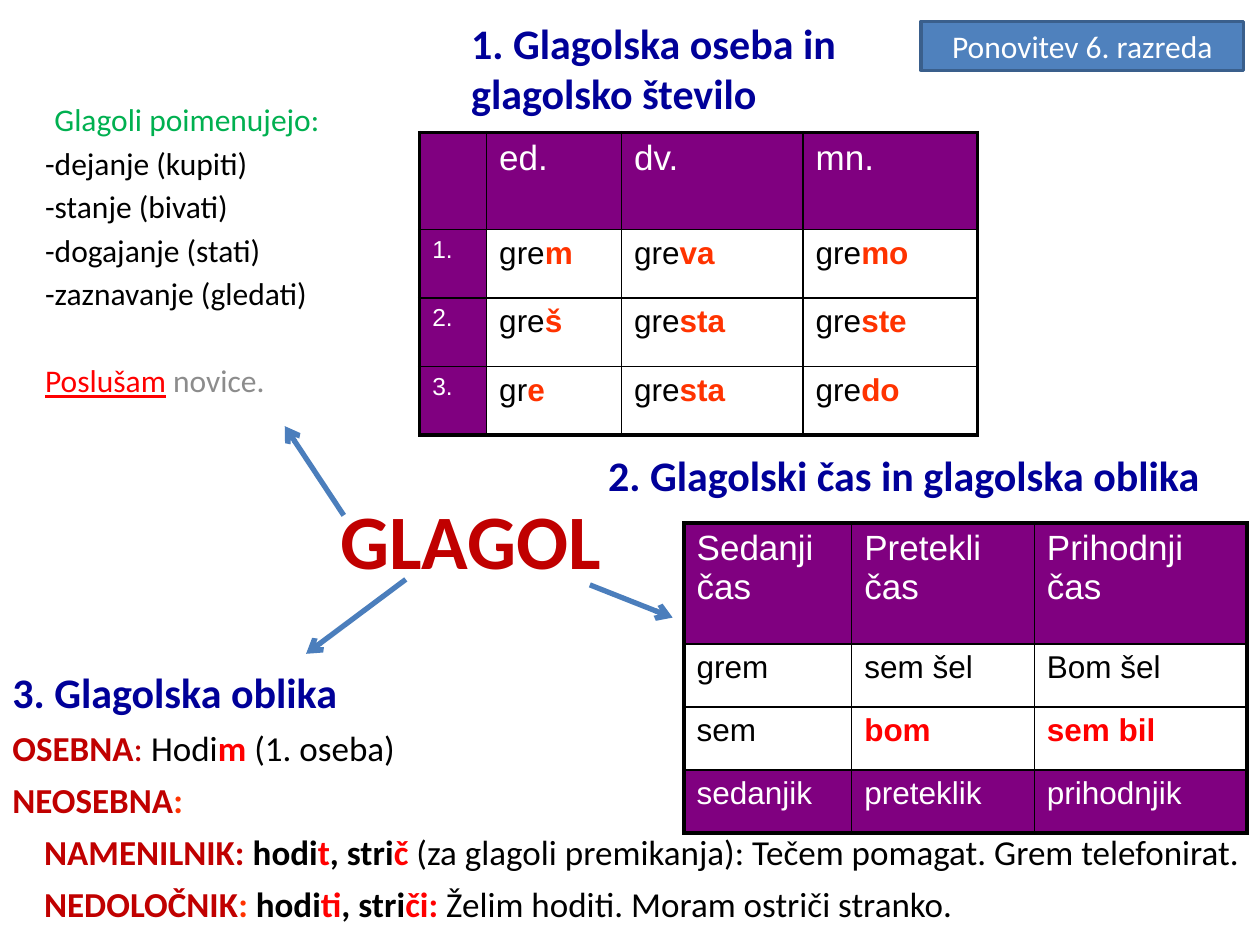
from lxml import etree
from pptx import Presentation
from pptx.dml.color import RGBColor
from pptx.enum import shapes, text
from pptx.oxml import ns
from pptx.util import Cm, Pt

BLACK, WHITE, NAVY, WINE = "000000", "FFFFFF", "000099", "C00000"
RED, FLAME, PLUM = "FF0000", "FF3300", "800080"
LEFT, MID = text.PP_ALIGN.LEFT, text.PP_ALIGN.CENTER


def tint(code):
    return RGBColor.from_string(code)


def add_runs(para, runs, size, face="Calibri"):
    for words, code, *marks in runs:
        font = para.add_run()
        font.text = words
        font = font.font
        font.name, font.size = face, Pt(size)
        font.color.rgb = tint(code)
        font.bold = "bold" in marks
        font.underline = "under" in marks


def add_text(slide, box, lines, align=LEFT):
    frame = slide.shapes.add_textbox(*map(Cm, box)).text_frame
    frame.word_wrap = True
    for i, (size, gap, indent, runs) in enumerate(lines):
        para = frame.paragraphs[0] if i == 0 else frame.add_paragraph()
        para.alignment = align
        para.space_before = Pt(gap)
        if indent:
            para._p.get_or_add_pPr().set("marL", str(Cm(indent)))
        add_runs(para, runs, size)
    return frame


def add_edge(cell, side, width):
    line = etree.SubElement(cell._tc.get_or_add_tcPr(), ns.qn("a:ln" + side), w=str(Pt(width)))
    fill = etree.SubElement(line, ns.qn("a:solidFill"))
    etree.SubElement(fill, ns.qn("a:srgbClr"), val=BLACK)


def add_grid(slide, left, top, cols, rows, cells):
    size = [Cm(v) for v in (left, top, sum(cols), sum(rows))]
    grid = slide.shapes.add_table(len(rows), len(cols), *size).table
    grid.first_row = grid.horz_banding = False
    for col, width in zip(grid.columns, cols):
        col.width = Cm(width)
    for row, height in zip(grid.rows, rows):
        row.height = Cm(height)
    for r, line in enumerate(cells):
        for c, (fill, size, runs) in enumerate(line):
            cell = grid.cell(r, c)
            outer = {"L": c == 0, "R": c == len(cols) - 1, "T": r == 0, "B": r == len(rows) - 1}
            for side, edge in outer.items():
                add_edge(cell, side, 2.25 if edge else 1)
            if fill:
                cell.fill.solid()
                cell.fill.fore_color.rgb = tint(fill)
            else:
                cell.fill.background()
            add_runs(cell.text_frame.paragraphs[0], runs, size, "Arial")


def dark(words, size):
    return PLUM, size, [(words, WHITE)] if words else []


def add_arrow(slide, start, end):
    line = slide.shapes.add_connector(shapes.MSO_CONNECTOR.STRAIGHT, *map(Cm, start + end))
    line.line.color.rgb = tint("4B7EBC")
    line.line.width = Pt(3)
    etree.SubElement(line.line._get_or_add_ln(), ns.qn("a:tailEnd"), type="arrow")
    etree.SubElement(line._element.spPr, ns.qn("a:effectLst"))


def add_hub(slide, x, y, w, h):
    frame = add_text(slide, (x, y, w, h), [(44, 0, 0, [("GLAGOL", WINE, "bold")])], MID)
    frame.vertical_anchor = text.MSO_ANCHOR.MIDDLE
    for x1, y1, x2, y2 in [(5.46, 2.56, 3.45, 4.06), (9.17, 2.67, 10.84, 3.33),
                           (4.21, 1.27, 3.02, -0.53)]:
        add_arrow(slide, (x + x1, y + y1), (x + x2, y + y2))


def add_person(slide, x, y):
    head = [("1. Glagolska oseba in glagolsko število", NAVY, "bold")]
    add_text(slide, (x + 0.79, y, 8.69, 3.63), [(24, 0, 0, head)])
    cells = [[dark(words, 20) for words in ("", "ed.", "dv.", "mn.")]]
    forms = ["gre|m gre|va gre|mo", "gre|š gre|sta gre|ste", "gr|e gre|sta gre|do"]
    for n, line in enumerate(forms, 1):
        row = [dark(f"{n}.", 14)]
        for form in line.split():
            stem, tail = form.split("|")
            row.append((None, 18, [(stem, BLACK), (tail, FLAME, "bold")]))
        cells.append(row)
    add_grid(slide, x, y + 2.44, [1.35, 2.72, 3.66, 3.51], [1.96] + [1.38] * 3, cells)


def add_tense(slide, x, y):
    head = [("2. Glagolski čas in glagolska oblika", NAVY, "bold")]
    add_text(slide, (x, y, 14.1, 1.27), [(24, 0, 0, head)])
    plain = [(None, 18, [(words, BLACK)]) for words in ("grem", "sem šel", "Bom šel", "sem")]
    vivid = [(None, 18, [(words, RED, "bold")]) for words in ("bom", "sem bil")]
    cells = [
        [dark(words, 20) for words in ("Sedanji čas", "Pretekli čas", "Prihodnji čas")],
        plain[:3],
        plain[3:] + vivid,
        [dark(words, 18) for words in ("sedanjik", "preteklik", "prihodnjik")],
    ]
    add_grid(slide, x + 1.78, y + 1.6, [3.38, 3.68, 4.29], [2.44] + [1.27] * 3, cells)


def add_forms(slide, x, y, w, h):
    gap, step = 5.7, 0.64
    add_text(slide, (x, y, w, h), [
        (24, 0, 0, [("3. Glagolska oblika", NAVY, "bold")]),
        (20, gap, 0, [("OSEBNA", WINE, "bold"), (": ", WINE), ("Hodi", BLACK),
                      ("m", RED, "bold"), (" (1. oseba)", BLACK)]),
        (20, gap, 0, [("NEOSEBNA", WINE, "bold"), (":", FLAME, "bold")]),
        (20, gap, step, [("NAMENILNIK: ", WINE, "bold"), ("hodi", BLACK, "bold"),
                         ("t", RED, "bold"), (", stri", BLACK, "bold"), ("č ", RED, "bold"),
                         ("(za glagoli premikanja): Tečem pomagat. Grem telefonirat.", BLACK)]),
        (20, gap, step, [("NEDOLOČNIK", WINE, "bold"), (":", FLAME, "bold"),
                         (" hodi", BLACK, "bold"), ("ti", RED, "bold"),
                         (", stri", BLACK, "bold"), ("či: ", RED, "bold"),
                         ("Želim hoditi. Moram ostriči stranko.", BLACK)]),
    ])


def add_names(slide, x, y, w, h):
    gap = 3.2
    items = ["-dejanje (kupiti)", "-stanje (bivati)", "-dogajanje (stati)",
             "-zaznavanje (gledati)"]
    lines = [(18, 0, 0, [("Glagoli poimenujejo:", "00B050")])]
    lines += [(18, gap, 0, [(item, BLACK)]) for item in items]
    lines.append((18, 28.3, 0, [("Poslušam", RED, "under"), (" novice.", "8C8C8C")]))
    frame = add_text(slide, (x, y, w, h), lines)
    frame.paragraphs[0].alignment = MID


def add_badge(slide, x, y, w, h):
    badge = slide.shapes.add_shape(shapes.MSO_SHAPE.RECTANGLE, *map(Cm, (x, y, w, h)))
    badge.shadow.inherit = False
    badge.fill.solid()
    badge.fill.fore_color.rgb = tint("4F81BD")
    badge.line.color.rgb = tint("3A5F8C")
    badge.line.width = Pt(2)
    frame = badge.text_frame
    frame.word_wrap = True
    frame.vertical_anchor = text.MSO_ANCHOR.MIDDLE
    frame.paragraphs[0].alignment = MID
    add_runs(frame.paragraphs[0], [("Ponovitev 6. razreda", WHITE)], 18)


def main():
    deck = Presentation()
    deck.slide_width, deck.slide_height = Cm(25.4), Cm(19.05)
    slide = deck.slides.add_slide(deck.slide_layouts[6])
    add_hub(slide, 2.72, 9.12, 13.54, 3.48)
    add_person(slide, 8.46, 0.23)
    add_tense(slide, 12.01, 8.94)
    add_forms(slide, 0, 13.31, 25.4, 5.74)
    add_names(slide, 0.66, 1.9, 6.22, 6.68)
    add_badge(slide, 18.57, 0.43, 6.5, 0.99)
    deck.save("out.pptx")


if __name__ == "__main__":
    main()
